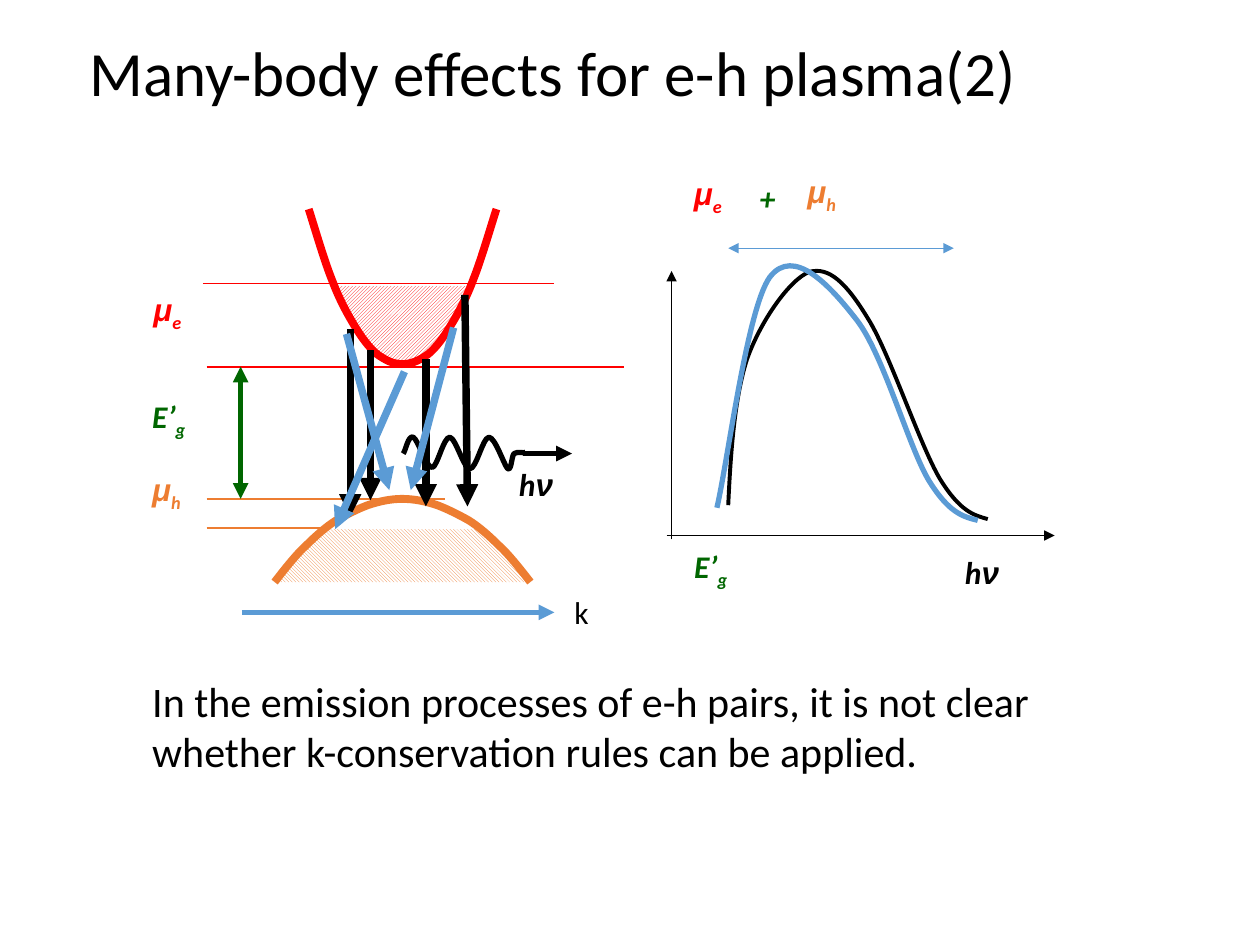
from dataclasses import dataclass
from typing import Optional

from lxml.etree import SubElement
from pptx import Presentation
from pptx.dml.color import RGBColor
from pptx.enum.dml import MSO_PATTERN as Pattern
from pptx.enum.shapes import MSO_CONNECTOR as Connector
from pptx.enum.text import MSO_ANCHOR as Anchor
from pptx.oxml.ns import qn
from pptx.util import Inches, Pt

Point = tuple[float, float]
BLACK, WHITE, RED, ORANGE = "000000", "FFFFFF", "FF0000", "ED7D31"
GREEN, BLUE = "006600", "5B9BD5"
BAND_CENTER = 3.195


@dataclass
class Line:
    start: Point
    end: Point
    color: str
    width: float
    head: bool = False
    tail: bool = False


@dataclass
class Curve:
    points: list[Point]
    color: Optional[str] = None
    width: float = 0
    fill: Optional[str] = None
    pattern: Optional[Pattern] = None


@dataclass
class Run:
    text: str
    font: str = "Calibri"
    subscript: bool = False


@dataclass
class Label:
    box: tuple[float, float, float, float]
    runs: list[Run]
    color: str = BLACK
    size: int = 18
    emphasis: bool = True
    anchor: Anchor = Anchor.TOP
    spacing: float = 1.0


def rgb(color: str) -> RGBColor:
    return RGBColor.from_string(color)


def mirrored(half: list[Point]) -> list[Point]:
    """Complete a band from its left half, reflected about the band centre."""
    return half + [(round(2 * BAND_CENTER - x, 2), y) for x, y in half[-2::-1]]


def draw_line(shapes, line: Line) -> None:
    ends = [Inches(value) for value in line.start + line.end]
    connector = shapes.add_connector(Connector.STRAIGHT, *ends)
    connector.line.color.rgb = rgb(line.color)
    connector.line.width = Pt(line.width)
    outline = connector.line._get_or_add_ln()
    for shown, tag in ((line.head, "a:headEnd"), (line.tail, "a:tailEnd")):
        if shown:
            SubElement(outline, qn(tag), type="triangle")
    SubElement(connector._element.spPr, qn("a:effectLst"))


def draw_curve(shapes, curve: Curve) -> None:
    """Draw a chain of Bézier segments: a start, then three points for each."""
    points = [(Inches(x), Inches(y)) for x, y in curve.points]
    builder = shapes.build_freeform(*points[0])
    builder.add_line_segments(points[1:], close=False)
    shape = builder.convert_to_shape()
    segments = list(shape._element.iter(qn("a:lnTo")))
    outline = segments[0].getparent()
    for index in range(0, len(segments), 3):
        bezier = SubElement(outline, qn("a:cubicBezTo"))
        for segment in segments[index:index + 3]:
            bezier.append(segment[0])
            outline.remove(segment)
    shape.shadow.inherit = False
    if curve.pattern:
        shape.fill.patterned()
        shape.fill.pattern = curve.pattern
        shape.fill.fore_color.rgb = rgb(curve.fill)
        shape.fill.back_color.rgb = rgb(WHITE)
    elif curve.fill:
        shape.fill.solid()
        shape.fill.fore_color.rgb = rgb(curve.fill)
    else:
        shape.fill.background()
    if curve.color:
        shape.line.color.rgb = rgb(curve.color)
        shape.line.width = Pt(curve.width)
    else:
        shape.line.fill.background()


def draw_label(shapes, label: Label) -> None:
    frame = shapes.add_textbox(*[Inches(value) for value in label.box]).text_frame
    frame.word_wrap = True
    frame.vertical_anchor = label.anchor
    paragraph = frame.paragraphs[0]
    paragraph.line_spacing = label.spacing
    for item in label.runs:
        run = paragraph.add_run()
        run.text = item.text
        run.font.name = item.font
        run.font.size = Pt(label.size)
        run.font.bold = run.font.italic = label.emphasis
        run.font.color.rgb = rgb(label.color)
        if item.subscript:
            run._r.get_or_add_rPr().set("baseline", "-25000")


def draw(shapes, items: list) -> None:
    painters = {Line: draw_line, Curve: draw_curve, Label: draw_label}
    for item in items:
        if isinstance(item, list):
            draw(shapes.add_group_shape().shapes, item)
        else:
            painters[type(item)](shapes, item)


def potential(left: float, top: float, carrier: str, color: str) -> Label:
    runs = [Run("μ", "Arial"), Run(carrier, subscript=True)]
    return Label((left, top, 0.84, 0.57), runs, color)


def gap_label(left: float, top: float) -> Label:
    return Label((left, top, 1.28, 0.57), [Run("E’"), Run("g", subscript=True)], GREEN)


def photon_label(left: float, top: float) -> Label:
    return Label((left, top, 1.28, 0.57), [Run("h"), Run("ν", "Arial")])


def transitions(color: str, ends: list[tuple[Point, Point]]) -> list[Line]:
    return [Line(start, end, color, 4.25, tail=True) for start, end in ends]


ELECTRONS = mirrored([
    (2.66, 2.27), (2.68, 2.31), (2.75, 2.46), (2.79, 2.54), (2.83, 2.62), (2.88, 2.68),
    (2.92, 2.72), (2.96, 2.77), (3, 2.81), (3.05, 2.84), (3.1, 2.86), (3.14, 2.88), (3.19, 2.88)])
CONDUCTION = mirrored([
    (2.45, 1.66), (2.48, 1.75), (2.57, 2.06), (2.63, 2.21), (2.69, 2.37), (2.75, 2.48),
    (2.81, 2.58), (2.87, 2.68), (2.93, 2.76), (2.99, 2.81), (3.06, 2.86), (3.12, 2.89), (3.19, 2.89)])
VALENCE = mirrored([
    (2.18, 4.62), (2.22, 4.57), (2.34, 4.41), (2.43, 4.33), (2.51, 4.25), (2.59, 4.18),
    (2.67, 4.13), (2.76, 4.08), (2.84, 4.04), (2.92, 4.01), (3.01, 3.98), (3.1, 3.96), (3.19, 3.96)])
HOLES = mirrored([
    (2.58, 4.2), (2.61, 4.19), (2.68, 4.13), (2.73, 4.1), (2.78, 4.07), (2.83, 4.04),
    (2.88, 4.02), (2.93, 4), (2.98, 3.99), (3.03, 3.98), (3.08, 3.97), (3.14, 3.96), (3.19, 3.96)])
WAVE = [
    (3.2, 3.6), (3.22, 3.58), (3.24, 3.45), (3.28, 3.47), (3.32, 3.49), (3.38, 3.71), (3.43, 3.71),
    (3.47, 3.71), (3.52, 3.47), (3.57, 3.47), (3.62, 3.48), (3.68, 3.72), (3.73, 3.72),
    (3.78, 3.72), (3.83, 3.48), (3.88, 3.47), (3.93, 3.47), (4, 3.69), (4.03, 3.72),
    (4.06, 3.74), (4.06, 3.62), (4.08, 3.6), (4.11, 3.58), (4.16, 3.6), (4.17, 3.59)]
BLACK_SPECTRUM = [
    (5.78, 4.01), (5.8, 3.59), (5.83, 3.16), (5.93, 2.85), (6.04, 2.54), (6.27, 2.22),
    (6.42, 2.16), (6.58, 2.11), (6.72, 2.25), (6.89, 2.53), (7.06, 2.8), (7.3, 3.53),
    (7.46, 3.8), (7.62, 4.06), (7.73, 4.09), (7.84, 4.12)]
BLUE_SPECTRUM = [
    (5.69, 4.03), (5.78, 3.64), (5.93, 2.45), (6.11, 2.2), (6.3, 1.95), (6.59, 2.27),
    (6.8, 2.54), (7.01, 2.81), (7.21, 3.54), (7.37, 3.81), (7.53, 4.07), (7.64, 4.1), (7.76, 4.13)]

ITEMS = [
    Label((0.61, -0.12, 8.62, 1.45), [Run("Many-body effects for e-h plasma(2)")],
          size=36, emphasis=False, anchor=Anchor.MIDDLE, spacing=0.9),
    Label((1.11, 5.31, 7.21, 0.91),
          [Run("In the emission processes of e-h pairs, it is not clear "
               "whether k-conservation rules can be applied.")], size=24, emphasis=False),
    Line((1.64, 3.96), (3.53, 3.96), ORANGE, 1),
    Line((1.64, 4.19), (2.68, 4.19), ORANGE, 1),
    Line((1.64, 2.91), (4.95, 2.91), RED, 1),
    Line((1.61, 2.25), (4.4, 2.25), RED, 1),
    potential(1.12, 2.25, "e", RED),
    potential(1.11, 3.68, "h", ORANGE),
    gap_label(1.11, 3.1),
    photon_label(4.02, 3.64),
    Curve(ELECTRONS, fill=RED, pattern=Pattern.LIGHT_UPWARD_DIAGONAL),
    Curve(CONDUCTION, RED, 4.5),
    Curve(VALENCE, fill=ORANGE, pattern=Pattern.LIGHT_DOWNWARD_DIAGONAL),
    Curve(HOLES, BLACK, 0.75, WHITE),
    Curve(VALENCE, ORANGE, 4.5),
    Line((1.91, 2.91), (1.91, 3.96), GREEN, 3, head=True, tail=True),
    [Curve(WAVE, BLACK, 3), Line((4.15, 3.6), (4.54, 3.6), BLACK, 3, tail=True)],
    Line((5.29, 4.25), (8.37, 4.25), BLACK, 0.5, tail=True),
    Curve(BLACK_SPECTRUM, BLACK, 2.25),
    gap_label(5.41, 4.29),
    Line((5.78, 1.97), (7.57, 1.97), BLUE, 0.5, head=True, tail=True),
    potential(5.41, 1.33, "e", RED),
    potential(6.31, 1.32, "h", ORANGE),
    Label((5.93, 1.37, 1.28, 0.46), [Run("+")], GREEN),
    photon_label(7.56, 4.34),
    Line((5.33, 4.28), (5.33, 2.15), BLACK, 0.5, tail=True),
    Line((1.92, 4.86), (4.4, 4.86), BLUE, 3, tail=True),
    Label((4.46, 4.66, 0.79, 0.4), [Run("k")], emphasis=False),
    transitions(BLACK, [((2.78, 2.61), (2.78, 4.1)), ((2.94, 2.78), (2.94, 3.97)),
                        ((3.38, 2.85), (3.38, 4.02)), ((3.69, 2.34), (3.71, 4.02))]),
    transitions(BLUE, [((2.75, 2.65), (3.09, 3.89)), ((3.6, 2.6), (3.26, 3.89)),
                       ((3.21, 2.95), (2.66, 4.2))]),
    Curve(BLUE_SPECTRUM, BLUE, 3),
]

presentation = Presentation()
presentation.slide_width, presentation.slide_height = Inches(10), Inches(7.5)
slide = presentation.slides.add_slide(presentation.slide_layouts[6])
draw(slide.shapes, ITEMS)
presentation.save("out.pptx")
